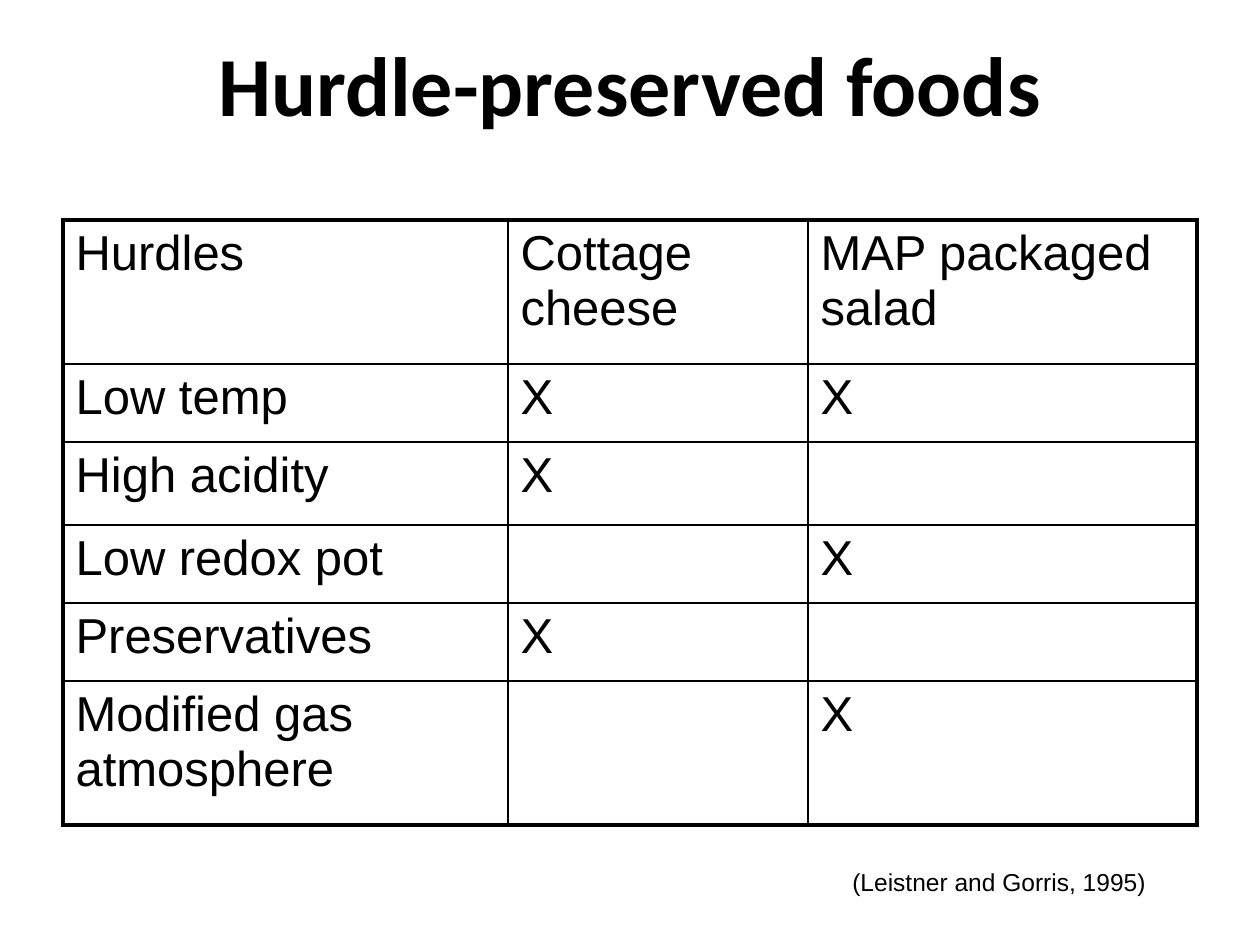
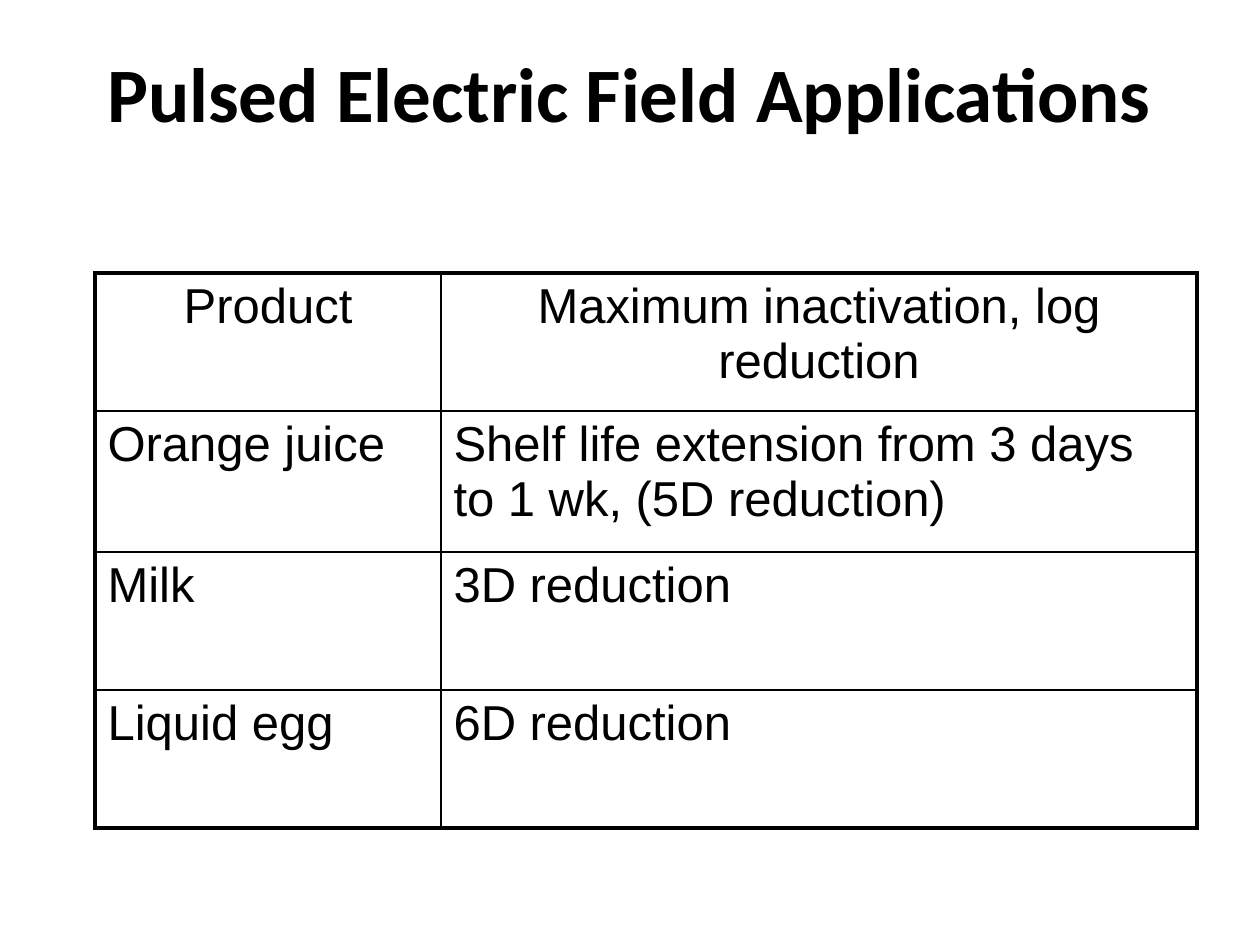
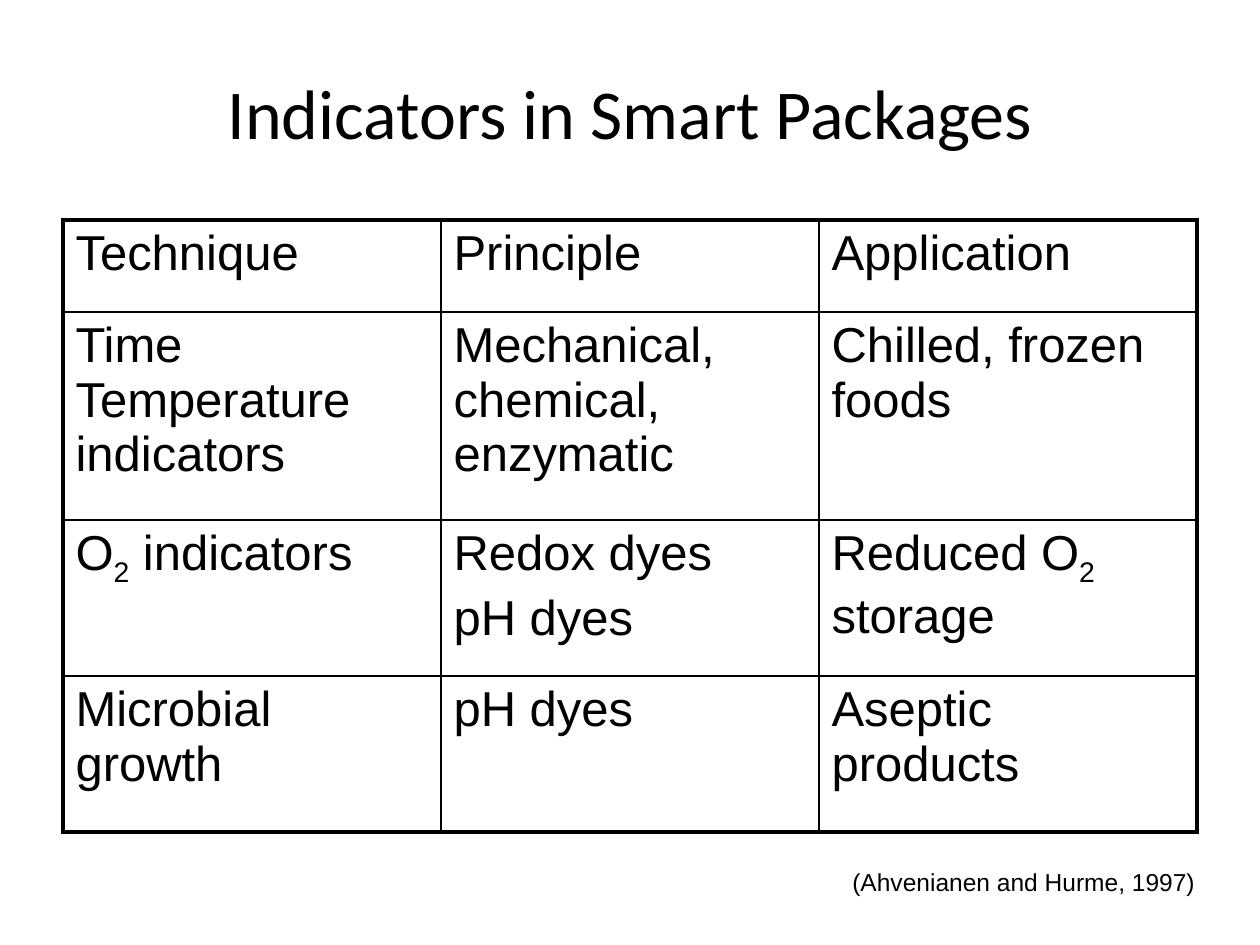
from lxml import etree
from pptx import Presentation
from pptx.dml.color import RGBColor
from pptx.enum.text import MSO_ANCHOR, PP_ALIGN
from pptx.oxml.ns import qn
from pptx.util import Pt

MIDDLE = MSO_ANCHOR.MIDDLE
TOP = MSO_ANCHOR.TOP
LEFT = PP_ALIGN.LEFT
CENTER = PP_ALIGN.CENTER

EMU_PER_PX = 914400 / 126
BLANK_LAYOUT = 6
BLACK = "000000"
TITLE_FONT = "Calibri"
BODY_FONT = "Arial"
TABLE_SIZE = 28
CITATION_SIZE = 14
OUTER_BORDER = 2.25
INNER_BORDER = 1
PARAGRAPH_GAP = 0.2

HURDLES = [
    ["Hurdles", "Cottage cheese", "MAP packaged salad"],
    ["Low temp", "X", "X"],
    ["High acidity", "X", ""],
    ["Low redox pot", "", "X"],
    ["Preservatives", "X", ""],
    ["Modified gas atmosphere", "", "X"],
]
PULSED_FIELD = [
    ["Product", "Maximum inactivation, log reduction"],
    ["Orange juice", "Shelf life extension from 3 days to 1 wk, (5D reduction)"],
    ["Milk", "3D reduction"],
    ["Liquid egg", "6D reduction"],
]
INDICATORS = [
    ["Technique", "Principle", "Application"],
    ["Time Temperature indicators", "Mechanical, chemical, enzymatic", "Chilled, frozen foods"],
    ["O~2~ indicators", "Redox dyes\npH dyes", "Reduced O~2~ storage"],
    ["Microbial growth", "pH dyes", "Aseptic products"],
]


def px(length):
    return round(length * EMU_PER_PX)


def color(hex_string):
    return RGBColor.from_string(hex_string)


def write_text(frame, text, size, font=BODY_FONT, bold=False, align=LEFT):
    """Write one paragraph per line; text between tildes is subscript."""
    for line_number, line in enumerate(text.split("\n")):
        paragraph = frame.add_paragraph() if line_number else frame.paragraphs[0]
        paragraph.alignment = align
        if line_number:
            paragraph.space_before = Pt(size * PARAGRAPH_GAP)
        for part_number, part in enumerate(line.split("~")):
            if not part:
                continue
            run = paragraph.add_run()
            run.text = part
            run.font.name = font
            run.font.size = Pt(size)
            run.font.bold = bold
            run.font.color.rgb = color(BLACK)
            if part_number % 2:
                run._r.get_or_add_rPr().set("baseline", "-25000")


def add_text_box(slide, left, top, width, height, anchor=TOP):
    box = slide.shapes.add_textbox(px(left), px(top), px(width), px(height))
    box.text_frame.word_wrap = True
    box.text_frame.vertical_anchor = anchor
    return box.text_frame


def add_title(slide, text, top, height, size, bold=True):
    frame = add_text_box(slide, 63, top, 1134, height, MIDDLE)
    write_text(frame, text, size, TITLE_FONT, bold, CENTER)
    frame.paragraphs[0].line_spacing = 0.9


def add_citation(slide, text):
    write_text(add_text_box(slide, 840, 861, 391, 42), text, CITATION_SIZE)


def set_borders(cell, outer_sides):
    properties = cell._tc.get_or_add_tcPr()
    for index, side in enumerate("LRTB"):
        width = OUTER_BORDER if side in outer_sides else INNER_BORDER
        line = etree.Element(qn("a:ln" + side), w=str(Pt(width)))
        fill = etree.SubElement(line, qn("a:solidFill"))
        etree.SubElement(fill, qn("a:srgbClr"), val=BLACK)
        properties.insert(index, line)


def add_grid(slide, rows, left, top, widths, heights, header_align=LEFT):
    """Add an unfilled table with a heavy frame and thin inner lines."""
    table = slide.shapes.add_table(
        len(rows), len(widths), px(left), px(top), px(sum(widths)), px(sum(heights))
    ).table
    table.first_row = False
    table.horz_banding = False
    for column, width in zip(table.columns, widths):
        column.width = px(width)
    for row_number, (texts, height) in enumerate(zip(rows, heights)):
        table.rows[row_number].height = px(height)
        for column_number, text in enumerate(texts):
            cell = table.cell(row_number, column_number)
            cell.fill.background()
            edges = {
                "L": column_number == 0,
                "R": column_number == len(widths) - 1,
                "T": row_number == 0,
                "B": row_number == len(rows) - 1,
            }
            set_borders(cell, [side for side, outer in edges.items() if outer])
            align = LEFT if row_number else header_align
            write_text(cell.text_frame, text, TABLE_SIZE, align=align)


def add_slide(presentation):
    return presentation.slides.add_slide(presentation.slide_layouts[BLANK_LAYOUT])


def main():
    presentation = Presentation()
    presentation.slide_width = px(1260)
    presentation.slide_height = px(945)

    slide = add_slide(presentation)
    add_title(slide, "Hurdle-preserved foods", 21, 137, 48)
    add_grid(slide, HURDLES, 63, 220, [445, 300, 389], [144, 78, 83, 78, 78, 144])
    add_citation(slide, "(Leistner and Gorris, 1995)")

    slide = add_slide(presentation)
    add_title(slide, "Pulsed Electric Field Applications", 0, 195, 44)
    add_grid(slide, PULSED_FIELD, 95, 273, [346, 756], [138, 141, 138, 138], CENTER)

    slide = add_slide(presentation)
    add_title(slide, "Indicators in Smart Packages", 38, 157, 40, bold=False)
    add_grid(slide, INDICATORS, 63, 220, [378] * 3, [92, 208, 156, 156])
    add_citation(slide, "(Ahvenianen and Hurme, 1997)")

    presentation.save("out.pptx")


if __name__ == "__main__":
    main()
